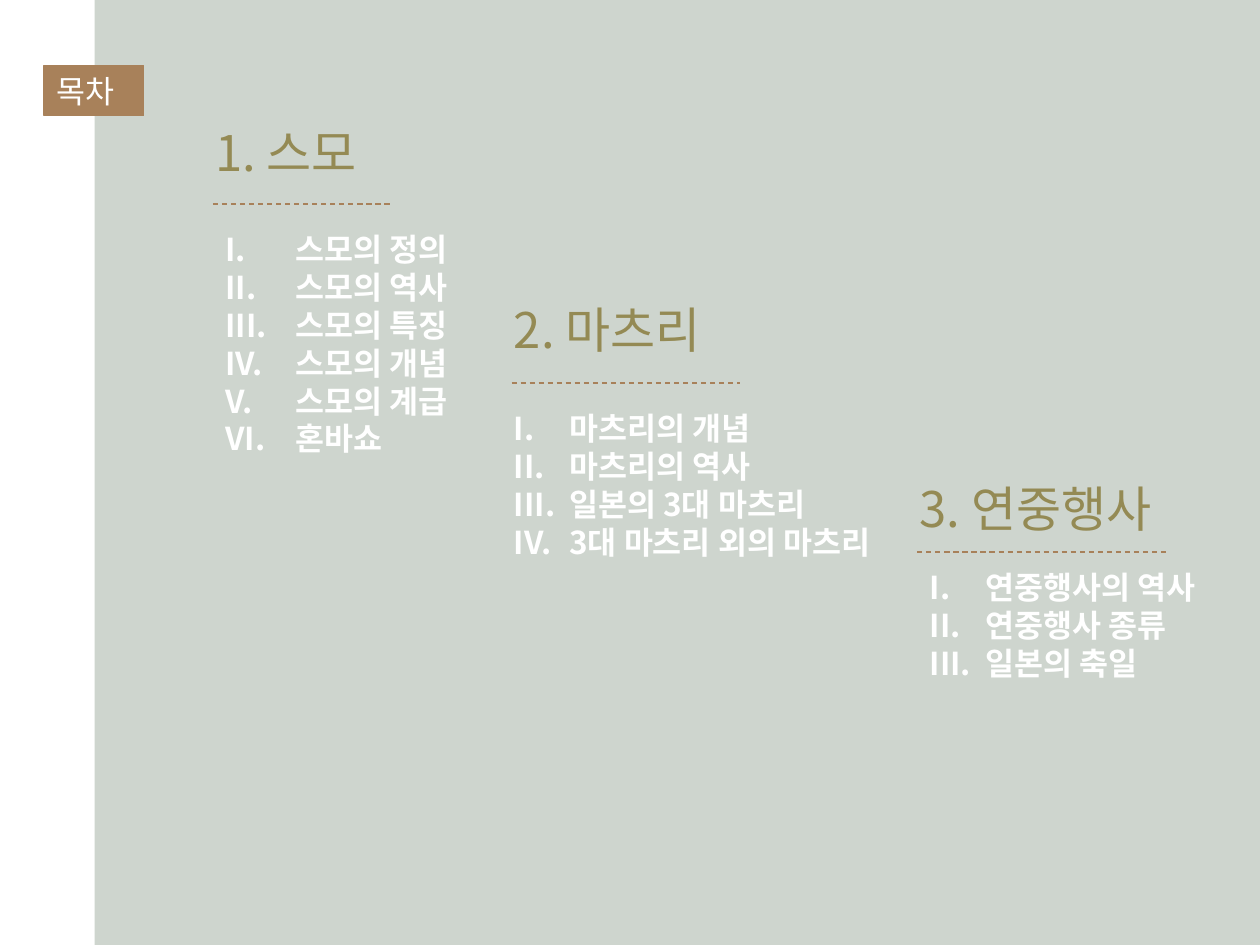
from lxml.etree import SubElement
from pptx import Presentation
from pptx.dml.color import RGBColor
from pptx.enum.dml import MSO_LINE
from pptx.enum.shapes import MSO_CONNECTOR, MSO_SHAPE
from pptx.enum.text import MSO_ANCHOR, PP_ALIGN
from pptx.oxml.ns import qn
from pptx.util import Inches, Pt

COLORS = {"panel": "CED5CE", "accent": "A8815A", "heading": "948A54", "white": "FFFFFF"}
KOREAN_FONT = "Noto Sans CJK KR"
RULE_INSET = 0.08
LINE_HEIGHT = 1.2

SECTIONS = [
    {"box": (1.61, 0.92, 2.28), "rule": (0.70, 1.42), "list": (0.08, 0.86, 2.52, 1.92),
     "indent": 0.56, "heading": "1. 스모",
     "items": ["스모의 정의", "스모의 역사", "스모의 특징", "스모의 개념", "스모의 계급", "혼바쇼"]},
    {"box": (3.98, 2.33, 2.68), "rule": (0.71, 1.81), "list": (0, 0.87, 3.54, 1.62),
     "indent": 0.44, "heading": "2. 마츠리",
     "items": ["마츠리의 개념", "마츠리의 역사", "일본의 3대 마츠리", "3대 마츠리 외의 마츠리"]},
    {"box": (7.2, 3.75, 3.46), "rule": (0.63, 1.97), "list": (0.08, 0.71, 2.6, 1.01),
     "indent": 0.44, "heading": "3. 연중행사",
     "items": ["연중행사의 역사", "연중행사 종류", "일본의 축일"]},
]


def color(name):
    """Return the named colour."""
    return RGBColor.from_string(COLORS[name])


def add_span(para, text, size, color_name, font=KOREAN_FONT, bold=False):
    """Add one formatted run to a paragraph."""
    span = para.add_run()
    span.text = text
    span.font.size = Pt(size)
    span.font.name = font
    span.font.bold = bold
    span.font.color.rgb = color(color_name)
    SubElement(span.font._element, qn("a:ea"), typeface=KOREAN_FONT)


def add_rectangle(page, left, top, width, height, fill):
    """Add a plain filled rectangle."""
    box = page.shapes.add_shape(
        MSO_SHAPE.RECTANGLE, Inches(left), Inches(top), Inches(width), Inches(height))
    box.shadow.inherit = False
    box.fill.solid()
    box.fill.fore_color.rgb = color(fill)
    box.line.fill.background()
    return box


def add_title_tag(page, left, top, width, height):
    """Add the contents label."""
    box = add_rectangle(page, left, top, width, height, "accent")
    box.line.color.rgb = color("accent")
    box.line.width = Pt(0.75)
    box.text_frame.vertical_anchor = MSO_ANCHOR.MIDDLE
    para = box.text_frame.paragraphs[0]
    para.alignment = PP_ALIGN.JUSTIFY
    add_span(para, "목차", 18, "white", "Arial")


def add_text(page, left, top, width, height, lines, size, color_name, bold=False):
    """Add a wrapped text box and return its paragraphs."""
    box = page.shapes.add_textbox(Inches(left), Inches(top), Inches(width), Inches(height))
    frame = box.text_frame
    frame.word_wrap = True
    for index, line in enumerate(lines):
        para = frame.add_paragraph() if index else frame.paragraphs[0]
        para.line_spacing = Pt(size * LINE_HEIGHT)
        add_span(para, line, size, color_name, bold=bold)
    return frame.paragraphs


def add_roman_numbers(paras, indent):
    """Number paragraphs with Roman numerals on a hanging indent."""
    for para in paras:
        properties = para._p.get_or_add_pPr()
        properties.set("marL", str(Inches(indent)))
        properties.set("indent", str(-Inches(indent)))
        SubElement(properties, qn("a:buFont"), typeface=KOREAN_FONT)
        SubElement(properties, qn("a:buAutoNum"), type="romanUcPeriod")


def add_dashed_rule(page, left, top, width):
    """Add a horizontal dashed line."""
    rule = page.shapes.add_connector(
        MSO_CONNECTOR.STRAIGHT, Inches(left), Inches(top), Inches(left + width), Inches(top))
    rule.line.color.rgb = color("accent")
    rule.line.width = Pt(0.75)
    rule.line.dash_style = MSO_LINE.DASH
    SubElement(rule._element.spPr, qn("a:effectLst"))


def add_section(page, section):
    """Add a heading, its rule and its numbered list."""
    left, top, width = section["box"]
    rule_offset, rule_width = section["rule"]
    list_left, list_top, list_width, list_height = section["list"]
    add_text(page, left, top, width, 0.57, [section["heading"]], 28, "heading")
    add_dashed_rule(page, left + RULE_INSET, top + rule_offset, rule_width)
    paras = add_text(page, left + list_left, top + list_top, list_width, list_height,
                     section["items"], 18, "white", bold=True)
    add_roman_numbers(paras, section["indent"])


def main():
    """Build the contents slide."""
    deck = Presentation()
    deck.slide_width, deck.slide_height = Inches(10), Inches(7.5)
    page = deck.slides.add_slide(deck.slide_layouts[6])
    add_rectangle(page, 0.75, 0, 9.25, 7.5, "panel")
    add_title_tag(page, 0.35, 0.52, 0.79, 0.4)
    for section in SECTIONS:
        add_section(page, section)
    deck.save("out.pptx")


if __name__ == "__main__":
    main()
